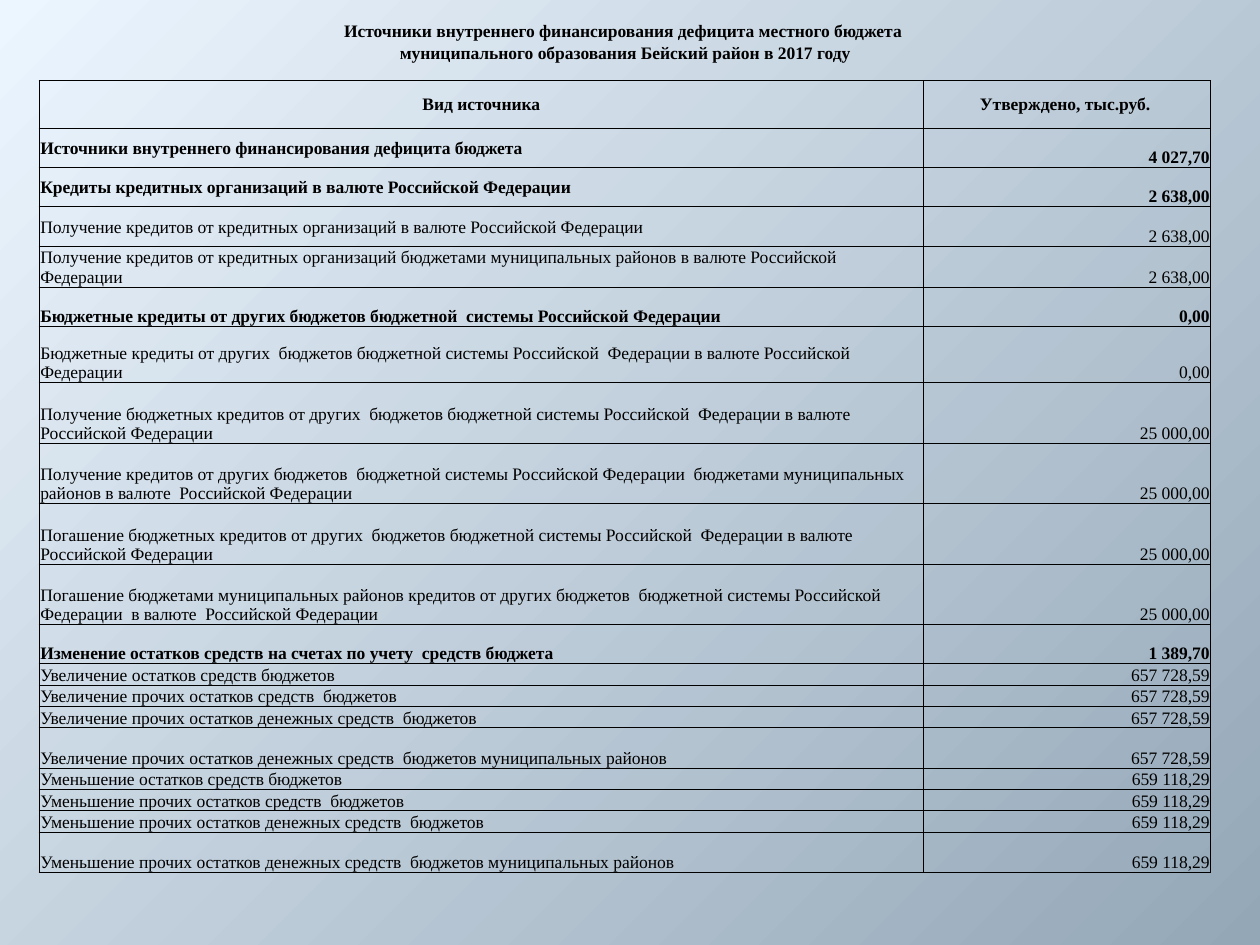
import pptx
import pptx.dml.color
import pptx.enum.text
import pptx.oxml
import pptx.oxml.ns
import pptx.util
from pptx.util import Inches

ALIGN = pptx.enum.text.PP_ALIGN
ANCHOR = pptx.enum.text.MSO_ANCHOR

THEME = {
    "font": "Times New Roman",
    "size": 10,
    "spacer_size": 7,
    "ink": "000000",
    "line_width": 0.5,
    "gradient": ("ECF6FF", "94A7B7"),
}

TITLE = [
    "Источники внутреннего финансирования дефицита местного бюджета ",
    "муниципального образования Бейский район в 2017 году",
]
HEADER = ("Вид источника", "Утверждено, тыс.руб. ")

# source, amount, row height, bold, anchor of the source name
SOURCES = [
    ("Источники внутреннего финансирования дефицита бюджета",
     "4 027,70", 0.31, True, ANCHOR.MIDDLE),
    ("Кредиты кредитных организаций в валюте Российской Федерации",
     "2 638,00", 0.31, True, ANCHOR.MIDDLE),
    ("Получение кредитов от кредитных организаций в валюте Российской Федерации",
     "2 638,00", 0.32, False, ANCHOR.MIDDLE),
    ("Получение кредитов от кредитных организаций бюджетами муниципальных районов "
     "в валюте Российской Федерации",
     "2 638,00", 0.32, False, ANCHOR.MIDDLE),
    ("Бюджетные кредиты от других бюджетов бюджетной  системы Российской Федерации",
     "0,00", 0.31, True, ANCHOR.BOTTOM),
    ("Бюджетные кредиты от других  бюджетов бюджетной системы Российской  Федерации "
     "в валюте Российской Федерации",
     "0,00", 0.45, False, ANCHOR.BOTTOM),
    ("Получение бюджетных кредитов от других  бюджетов бюджетной системы Российской  "
     "Федерации в валюте Российской Федерации",
     "25 000,00", 0.48, False, ANCHOR.BOTTOM),
    ("Получение кредитов от других бюджетов  бюджетной системы Российской Федерации  "
     "бюджетами муниципальных районов в валюте  Российской Федерации",
     "25 000,00", 0.48, False, ANCHOR.BOTTOM),
    ("Погашение бюджетных кредитов от других  бюджетов бюджетной системы Российской  "
     "Федерации в валюте Российской Федерации",
     "25 000,00", 0.48, False, ANCHOR.BOTTOM),
    ("Погашение бюджетами муниципальных районов кредитов от других бюджетов  бюджетной "
     "системы Российской Федерации  в валюте  Российской Федерации",
     "25 000,00", 0.48, False, ANCHOR.BOTTOM),
    ("Изменение остатков средств на счетах по учету  средств бюджета",
     "1 389,70", 0.31, True, ANCHOR.BOTTOM),
]
BALANCES = [("Увеличение", "657 728,59"), ("Уменьшение", "659 118,29")]
BALANCE_KINDS = [
    ("остатков средств бюджетов", 0.17),
    ("прочих остатков средств  бюджетов", 0.17),
    ("прочих остатков денежных средств  бюджетов", 0.17),
    ("прочих остатков денежных средств  бюджетов муниципальных районов", 0.32),
]
SOURCES += [
    (f"{change} {kind}", amount, height, False, ANCHOR.BOTTOM)
    for change, amount in BALANCES
    for kind, height in BALANCE_KINDS
]

LEFT, TOP = 0.31, 0.16
COLUMN_WIDTHS = [7.02, 2.28]
TITLE_HEIGHT, SPACER_HEIGHT, HEADER_HEIGHT = 0.17, 0.14, 0.38
SPACER_ROW = len(TITLE)
HEADER_ROW = SPACER_ROW + 1
ROW_HEIGHTS = ([TITLE_HEIGHT] * len(TITLE) + [SPACER_HEIGHT, HEADER_HEIGHT]
               + [source[2] for source in SOURCES])

MARGINS = {
    "margin_left": Inches(0.01),
    "margin_right": Inches(0.01),
    "margin_top": Inches(0.01),
    "margin_bottom": 0,
}
FONT = {"name": THEME["font"], "size": pptx.util.Pt(THEME["size"])}


def set_values(target, values):
    for name, value in values.items():
        setattr(target, name, value)


def paint_background(slide):
    """Radial gradient that spreads from the top left corner."""
    fill = slide.background.fill
    fill.gradient()
    for stop, position, color in zip(fill.gradient_stops, (0, 1), THEME["gradient"]):
        stop.position = position
        stop.color.rgb = pptx.dml.color.RGBColor.from_string(color)
    gradient = slide.element.find(".//" + pptx.oxml.ns.qn("a:gradFill"))
    gradient.replace(
        gradient.find(pptx.oxml.ns.qn("a:lin")),
        pptx.oxml.parse_xml(
            f'<a:path {pptx.oxml.ns.nsdecls("a")} path="circle">'
            '<a:fillToRect r="100000" b="100000"/></a:path>'))


def set_borders(cell, sides):
    """Draw the sides named in the string (L, R, T, B) and hide the others."""
    width = pptx.util.Pt(THEME["line_width"])
    solid = f'<a:solidFill><a:srgbClr val="{THEME["ink"]}"/></a:solidFill>'
    properties = cell._tc.get_or_add_tcPr()
    for place, side in enumerate("LRTB"):
        paint = solid if side in sides else "<a:noFill/>"
        properties.insert(place, pptx.oxml.parse_xml(
            f'<a:ln{side} {pptx.oxml.ns.nsdecls("a")} w="{width}">{paint}</a:ln{side}>'))


def write_cell(cell, text, align, anchor, bold):
    cell.vertical_anchor = anchor
    para = cell.text_frame.paragraphs[0]
    para.alignment = align
    span = para.add_run()
    span.text = text
    set_values(span.font, {**FONT, "bold": bold})
    span.font.color.rgb = pptx.dml.color.RGBColor.from_string(THEME["ink"])


def shrink_empty_cell(cell):
    """Give an empty cell a small type size so that its row stays low."""
    cell.text_frame.paragraphs[0]._p.append(pptx.oxml.parse_xml(
        f'<a:endParaRPr {pptx.oxml.ns.nsdecls("a")} sz="{THEME["spacer_size"] * 100}"/>'))


def add_sources_table(slide):
    table = slide.shapes.add_table(
        len(ROW_HEIGHTS), len(COLUMN_WIDTHS), Inches(LEFT), Inches(TOP),
        Inches(sum(COLUMN_WIDTHS)), Inches(sum(ROW_HEIGHTS))).table
    set_values(table, {"first_row": False, "horz_banding": False})
    for column, width in zip(table.columns, COLUMN_WIDTHS):
        column.width = Inches(width)
    for index, (row, height) in enumerate(zip(table.rows, ROW_HEIGHTS)):
        row.height = Inches(height)
        sides = "LRTB" if index >= HEADER_ROW else "B" if index == SPACER_ROW else ""
        for cell in row.cells:
            set_values(cell, MARGINS)
            cell.fill.background()
            set_borders(cell, sides)
            if index <= SPACER_ROW:
                shrink_empty_cell(cell)

    for index, line in enumerate(TITLE):
        cell = table.cell(index, 0)
        cell.merge(table.cell(index, 1))
        write_cell(cell, line, ALIGN.CENTER, ANCHOR.BOTTOM, True)
    for column, label in enumerate(HEADER):
        write_cell(table.cell(HEADER_ROW, column), label, ALIGN.CENTER, ANCHOR.MIDDLE, True)
    for index, (name, amount, _, bold, anchor) in enumerate(SOURCES, HEADER_ROW + 1):
        write_cell(table.cell(index, 0), name, ALIGN.LEFT, anchor, bold)
        write_cell(table.cell(index, 1), amount, ALIGN.RIGHT, ANCHOR.BOTTOM, bold)


def main():
    deck = pptx.Presentation()
    set_values(deck, {"slide_width": Inches(10), "slide_height": Inches(7.5)})
    page = deck.slides.add_slide(deck.slide_layouts[6])
    paint_background(page)
    add_sources_table(page)
    deck.save("out.pptx")


if __name__ == "__main__":
    main()
